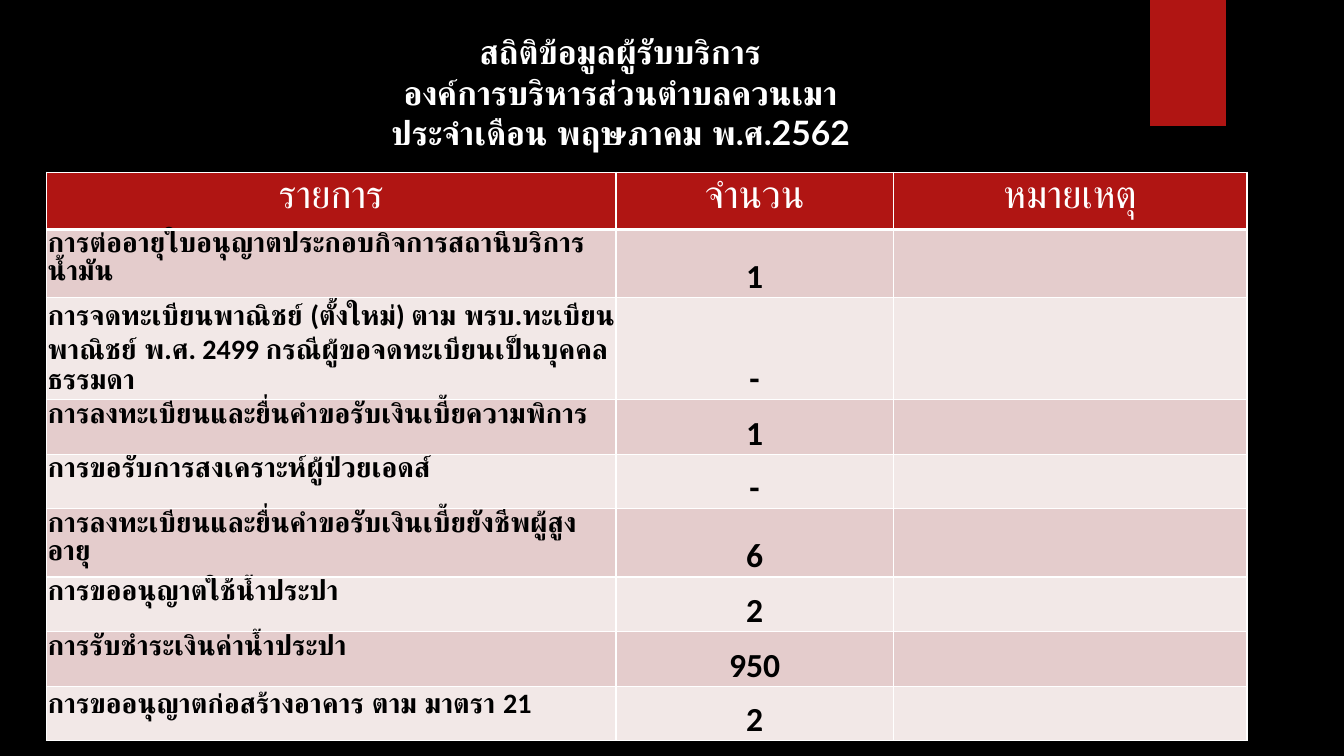
from dataclasses import dataclass

from lxml import etree
from pptx import Presentation
from pptx.dml.color import RGBColor
from pptx.enum import shapes, text
from pptx.oxml import ns
from pptx.util import Pt

WHITE, BLACK, RED = "FFFFFF", "000000", "B01513"
BANDS = ("E4CCCC", "F2E8E7")


@dataclass
class Style:
    font: str
    size: float
    color: str
    bold: bool
    align: text.PP_ALIGN


@dataclass
class Service:
    name: str
    count: str
    height: float = 39


TITLE = Style("Lato", 24, WHITE, True, text.PP_ALIGN.CENTER)
HEADER = Style("TeX Gyre Adventor", 28, WHITE, False, text.PP_ALIGN.CENTER)
NAME = Style("Calibri", 20, BLACK, True, text.PP_ALIGN.LEFT)
COUNT = Style("Calibri", 24, BLACK, True, text.PP_ALIGN.CENTER)

TITLE_LINES = (
    "สถิติข้อมูลผู้รับบริการ",
    "องค์การบริหารส่วนตำบลควนเมา",
    "ประจำเดือน พฤษภาคม พ.ศ.2562",
)
HEADINGS = ("รายการ", "จำนวน", "หมายเหตุ")
COLUMN_WIDTHS = (406.8, 198, 252.7)
HEADER_HEIGHT = 38.2
SERVICES = (
    Service("การต่ออายุใบอนุญาตประกอบกิจการสถานีบริการน้ำมัน", "1", 45.4),
    Service("การจดทะเบียนพาณิชย์ (ตั้งใหม่) ตาม พรบ.ทะเบียนพาณิชย์ พ.ศ. 2499 "
            "กรณีผู้ขอจดทะเบียนเป็นบุคคลธรรมดา", "-"),
    Service("การลงทะเบียนและยื่นคำขอรับเงินเบี้ยความพิการ", "1"),
    Service("การขอรับการสงเคราะห์ผู้ป่วยเอดส์", "-"),
    Service("การลงทะเบียนและยื่นคำขอรับเงินเบี้ยยังชีพผู้สูงอายุ", "6"),
    Service("การขออนุญาตใช้น้ำประปา", "2"),
    Service("การรับชำระเงินค่าน้ำประปา", "950"),
    Service("การขออนุญาตก่อสร้างอาคาร ตาม มาตรา 21", "2"),
)


def paint(fill, color: str) -> None:
    fill.solid()
    fill.fore_color.rgb = RGBColor.from_string(color)


def write(frame, lines: tuple, style: Style) -> None:
    for index, line in enumerate(lines):
        para = frame.paragraphs[0] if index == 0 else frame.add_paragraph()
        para.alignment = style.align
        span = para.add_run()
        span.text = line
        span.font.name = style.font
        span.font.size = Pt(style.size)
        span.font.bold = style.bold
        span.font.color.rgb = RGBColor.from_string(style.color)


def format_cell(cell, color: str, bottom: float = 1) -> None:
    """Draw white borders, then fill the cell."""
    properties = cell._tc.get_or_add_tcPr()
    for side, width in (("L", 1), ("R", 1), ("T", 1), ("B", bottom)):
        line = etree.SubElement(properties, ns.qn(f"a:ln{side}"), w=str(Pt(width)))
        solid = etree.SubElement(line, ns.qn("a:solidFill"))
        etree.SubElement(solid, ns.qn("a:srgbClr"), val=WHITE)
    paint(cell.fill, color)


def tighten(cell) -> None:
    cell.margin_left = cell.margin_right = cell.margin_top = Pt(0.75)
    cell.margin_bottom = Pt(0)


def add_title(page) -> None:
    title = page.shapes.title
    title.left, title.top, title.width, title.height = (
        Pt(196.6), Pt(18.7), Pt(493.2), Pt(94.3))
    frame = title.text_frame
    frame.word_wrap = True
    frame.auto_size = text.MSO_AUTO_SIZE.SHAPE_TO_FIT_TEXT
    frame.vertical_anchor = text.MSO_ANCHOR.TOP
    write(frame, TITLE_LINES, TITLE)


def add_ribbon(page) -> None:
    ribbon = page.shapes.add_shape(
        shapes.MSO_SHAPE.RECTANGLE, Pt(821.6), Pt(0), Pt(54), Pt(90))
    ribbon.shadow.inherit = False
    paint(ribbon.fill, RED)
    ribbon.line.fill.background()


def add_service_table(page) -> None:
    heights = [HEADER_HEIGHT] + [service.height for service in SERVICES]
    table = page.shapes.add_table(
        len(heights), len(HEADINGS), Pt(33.2), Pt(123),
        Pt(sum(COLUMN_WIDTHS)), Pt(sum(heights))).table
    table.horz_banding = False
    for column, width in zip(table.columns, COLUMN_WIDTHS):
        column.width = Pt(width)
    for row, height in zip(table.rows, heights):
        row.height = Pt(height)

    # Heading row
    for column, heading in enumerate(HEADINGS):
        cell = table.cell(0, column)
        format_cell(cell, RED, bottom=3)
        write(cell.text_frame, (heading,), HEADER)

    # One row for each service, with an empty remarks cell
    for index, service in enumerate(SERVICES):
        name, count, remarks = table.rows[index + 1].cells
        for cell in (name, count, remarks):
            format_cell(cell, BANDS[index % 2])
        tighten(name)
        tighten(count)
        count.vertical_anchor = text.MSO_ANCHOR.BOTTOM
        write(name.text_frame, (service.name,), NAME)
        write(count.text_frame, (service.count,), COUNT)


def main() -> None:
    deck = Presentation()
    deck.slide_width, deck.slide_height = Pt(960), Pt(540)
    page = deck.slides.add_slide(deck.slide_layouts.get_by_name("Title Only"))
    paint(page.background.fill, BLACK)
    add_ribbon(page)
    add_title(page)
    add_service_table(page)
    deck.save("out.pptx")


if __name__ == "__main__":
    main()
